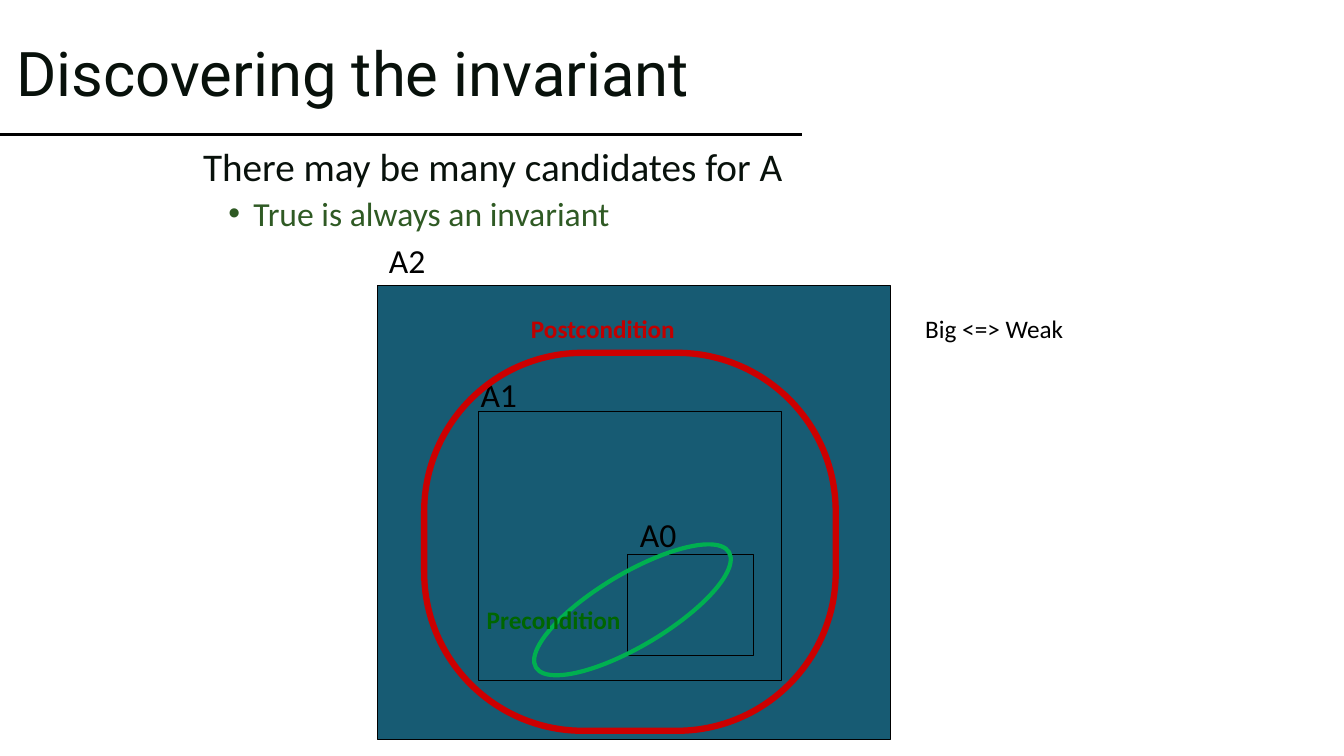
"""Build the slide on discovering a loop invariant with nested regions."""
from lxml.etree import SubElement
from pptx import Presentation
from pptx.dml.color import RGBColor
from pptx.enum.shapes import MSO_CONNECTOR, MSO_SHAPE
from pptx.enum.text import MSO_ANCHOR, MSO_AUTO_SIZE, PP_ALIGN
from pptx.oxml.ns import qn
from pptx.util import Pt

COLORS = {
    "ink": "08110B", "black": "000000", "teal": "175B73", "leaf": "2F5A24",
    "red": "CC0000", "dark red": "C00000", "green": "00B050", "dark green": "006600",
}
TITLE = ("Discovering the invariant", (4.3, 2.2, 540.7, 104.4))
TITLE_RULE = (0, 95.8, 573, 95.8)
BODY_BOX = (120, 102, 720, 84)
BODY = [
    {"text": "There may be many candidates for A", "size": 28, "color": "ink",
     "before": 10, "margin": 18, "indent": 0, "bullet": None},
    {"text": "True is always an invariant", "size": 24, "color": "leaf",
     "before": 5, "margin": 54, "indent": -18, "bullet": "•"},
]
REGIONS = {
    "A2": {"shape": MSO_SHAPE.RECTANGLE, "box": (270, 204, 366, 324),
           "fill": "teal", "line": "black", "width": 0.75},
    "A1": {"shape": MSO_SHAPE.RECTANGLE, "box": (342, 294, 216, 192),
           "fill": "teal", "line": "black", "width": 0.75},
    "A0": {"shape": MSO_SHAPE.RECTANGLE, "box": (448.5, 396, 90, 72),
           "fill": "teal", "line": "black", "width": 0.75},
    "Postcondition": {"shape": MSO_SHAPE.ROUNDED_RECTANGLE, "box": (303, 252, 294, 270),
                      "line": "red", "width": 4.5, "corner": 0.42},
    "Precondition": {"shape": MSO_SHAPE.OVAL, "box": (371.5, 409.7, 160.6, 51.8),
                     "line": "green", "width": 3, "rotation": 329.2},
}
LABELS = {
    "A1": {"box": (336.2, 263.5, 41, 36), "size": 24, "color": "black", "bold": False},
    "A0": {"box": (450, 363.6, 41, 36), "size": 24, "color": "black", "bold": False},
    "A2": {"box": (270.7, 167.8, 41, 36), "size": 24, "color": "black", "bold": False},
    "Postcondition": {"box": (372.2, 220.3, 118, 29), "size": 18,
                      "color": "dark red", "bold": True},
    "Big <=> Weak": {"box": (653.8, 220.3, 114.5, 29), "size": 18,
                     "color": "black", "bold": False},
    "Precondition": {"box": (340.6, 428.4, 111, 29), "size": 18,
                     "color": "dark green", "bold": True},
}
DRAW_ORDER = [
    (REGIONS, "A2"), (REGIONS, "A1"), (LABELS, "A1"), (REGIONS, "A0"),
    (LABELS, "A0"), (LABELS, "A2"), (REGIONS, "Postcondition"),
    (LABELS, "Postcondition"), (LABELS, "Big <=> Weak"),
    (REGIONS, "Precondition"), (LABELS, "Precondition"),
]


def points(values):
    return [Pt(value) for value in values]


def color(name):
    return RGBColor.from_string(COLORS[name])


def set_attributes(target, values):
    for name, value in values.items():
        setattr(target, name, value)


def write(paragraph, text, size, color_name, font="Calibri", bold=False):
    run = paragraph.add_run()
    run.text = text
    set_attributes(run.font, {"name": font, "size": Pt(size), "bold": bold})
    run.font.color.rgb = color(color_name)


def add_title(slide):
    text, box = TITLE
    title = slide.shapes.title
    set_attributes(title, dict(zip(("left", "top", "width", "height"), points(box))))
    set_attributes(title.text_frame, {
        "word_wrap": True, "auto_size": MSO_AUTO_SIZE.NONE,
        "vertical_anchor": MSO_ANCHOR.MIDDLE})
    paragraph = title.text_frame.paragraphs[0]
    set_attributes(paragraph, {"alignment": PP_ALIGN.LEFT, "line_spacing": 0.9})
    write(paragraph, text, 44, "ink", "Roboto")


def add_rule(slide):
    rule = slide.shapes.add_connector(MSO_CONNECTOR.STRAIGHT, *points(TITLE_RULE))
    rule.line.width = Pt(2.25)
    rule.line.color.rgb = color("black")
    SubElement(rule._element.spPr, qn("a:effectLst"))


def add_body(slide):
    frame = slide.shapes.add_textbox(*points(BODY_BOX)).text_frame
    frame.word_wrap = True
    for index, item in enumerate(BODY):
        paragraph = frame.add_paragraph() if index else frame.paragraphs[0]
        set_attributes(paragraph, {
            "level": index, "line_spacing": 0.9, "space_before": Pt(item["before"])})
        write(paragraph, item["text"], item["size"], item["color"])
        properties = paragraph._p.get_or_add_pPr()
        properties.set("marL", str(Pt(item["margin"])))
        properties.set("indent", str(Pt(item["indent"])))
        if item["bullet"]:
            SubElement(properties, qn("a:buFont"), typeface="Arial")
            SubElement(properties, qn("a:buChar"), char=item["bullet"])


def add_region(slide, region):
    shape = slide.shapes.add_shape(region["shape"], *points(region["box"]))
    shape.shadow.inherit = False
    shape.rotation = region.get("rotation", 0)
    if "corner" in region:
        shape.adjustments[0] = region["corner"]
    if "fill" in region:
        shape.fill.solid()
        shape.fill.fore_color.rgb = color(region["fill"])
    else:
        shape.fill.background()
    shape.line.color.rgb = color(region["line"])
    shape.line.width = Pt(region["width"])


def add_label(slide, text, label):
    frame = slide.shapes.add_textbox(*points(label["box"])).text_frame
    set_attributes(frame, {
        "word_wrap": False, "auto_size": MSO_AUTO_SIZE.SHAPE_TO_FIT_TEXT})
    write(frame.paragraphs[0], text, label["size"], label["color"], bold=label["bold"])


def main():
    presentation = Presentation()
    set_attributes(presentation, {"slide_width": Pt(960), "slide_height": Pt(540)})
    slide = presentation.slides.add_slide(presentation.slide_layouts[5])
    add_rule(slide)
    add_title(slide)
    add_body(slide)
    for group, name in DRAW_ORDER:
        if group is REGIONS:
            add_region(slide, group[name])
        else:
            add_label(slide, name, group[name])
    presentation.save("out.pptx")


if __name__ == "__main__":
    main()
